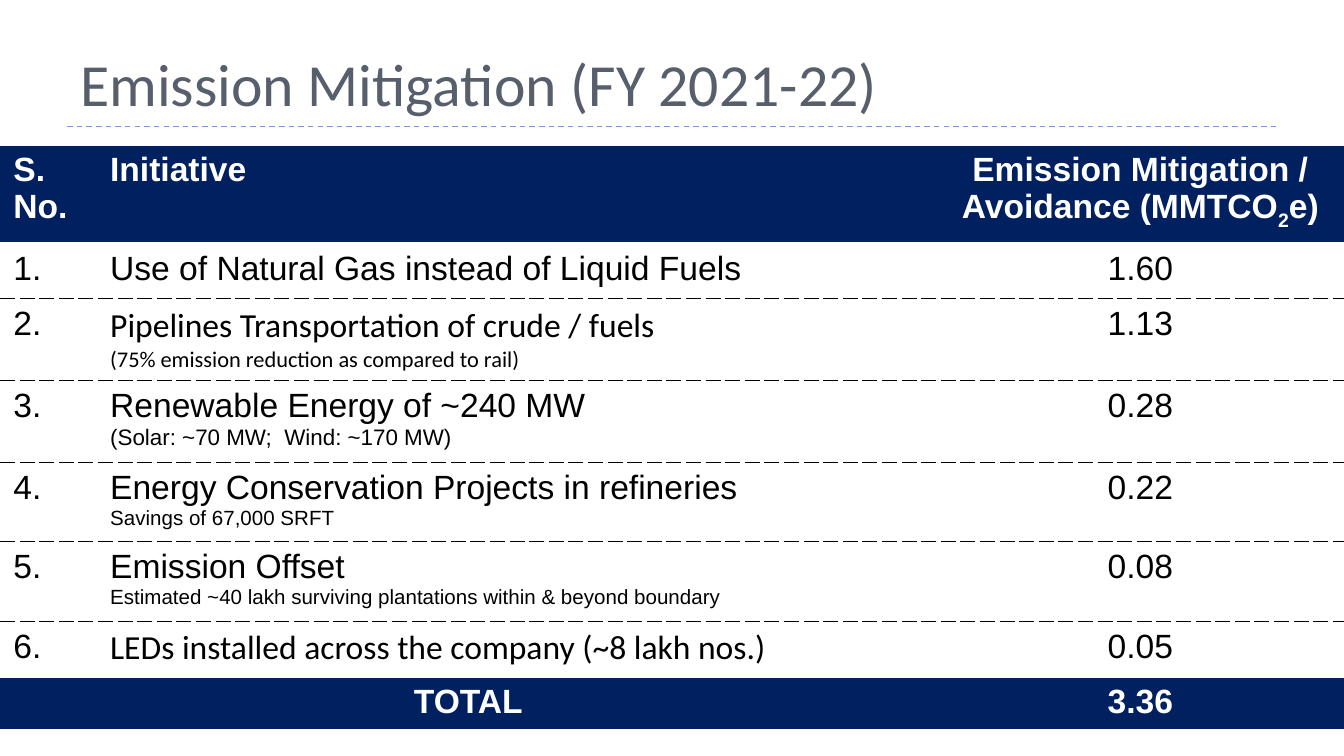
from lxml import etree
from pptx import Presentation
from pptx import util as u
from pptx.dml.color import RGBColor
from pptx.enum import dml, shapes, text
from pptx.oxml import ns

NAVY = RGBColor(0x00, 0x20, 0x60)
WHITE = RGBColor(0xFF, 0xFF, 0xFF)
BLACK = RGBColor(0x00, 0x00, 0x00)
SLATE = RGBColor(0x57, 0x5F, 0x6D)
BLUE = RGBColor(0x75, 0x98, 0xD9)
NO_STYLE = "{2D5ABB26-0587-4C30-8999-92F81FD0307C}"
SOLID = (WHITE, 2.25, "solid")
DASHED = (BLACK, 0.5, "sysDash")


def add_text(para, words, size=18, font="Arial", color=BLACK, bold=False,
             align=text.PP_ALIGN.LEFT, baseline=0):
    para.alignment = align
    span = para.add_run()
    span.text = words
    span.font.size = u.Pt(size)
    span.font.name = font
    span.font.bold = bold
    span.font.color.rgb = color
    if baseline:
        span.font._element.set("baseline", str(baseline * 1000))


def set_borders(cell, top, bottom):
    """Draw the top and bottom edges and leave the sides open."""
    edges = {"lnL": None, "lnR": None, "lnT": top, "lnB": bottom}
    for place, (tag, style) in enumerate(edges.items()):
        line = etree.Element(ns.qn("a:" + tag))
        if style is None:
            etree.SubElement(line, ns.qn("a:noFill"))
        else:
            color, width, dash = style
            line.set("w", str(int(u.Pt(width))))
            fill = etree.SubElement(line, ns.qn("a:solidFill"))
            etree.SubElement(fill, ns.qn("a:srgbClr"), val=str(color))
            etree.SubElement(line, ns.qn("a:prstDash"), val=dash)
        cell._tc.get_or_add_tcPr().insert(place, line)


deck = Presentation()
deck.slide_width = u.Inches(10)
deck.slide_height = u.Inches(10 * 9 / 16)
page = deck.slides.add_slide(deck.slide_layouts[6])

# Title and its rule
rule = page.shapes.add_connector(
    shapes.MSO_CONNECTOR.STRAIGHT,
    u.Inches(0.5), u.Inches(0.94), u.Inches(9.5), u.Inches(0.94))
rule.line.color.rgb = BLUE
rule.line.width = u.Pt(0.75)
rule.line.dash_style = dml.MSO_LINE.DASH
etree.SubElement(rule._element.spPr, ns.qn("a:effectLst"))

title = page.shapes.add_textbox(
    u.Inches(0.5), u.Inches(0.12), u.Inches(6.78), u.Inches(0.81))
title.text_frame.word_wrap = True
title.text_frame.vertical_anchor = text.MSO_ANCHOR.BOTTOM
add_text(title.text_frame.paragraphs[0], "Emission Mitigation (FY 2021-22)",
         size=32, font="Calibri", color=SLATE)

# Initiative, its font, note, note size, mitigation
initiatives = [
    ("Use of Natural Gas instead of Liquid Fuels", "Arial", None, 0, "1.60"),
    ("Pipelines Transportation of crude / fuels", "Calibri",
     "(75% emission reduction as compared to rail)", 12, "1.13"),
    ("Renewable Energy of ~240 MW", "Arial",
     "(Solar: ~70 MW;  Wind: ~170 MW)", 12, "0.28"),
    ("Energy Conservation Projects in refineries", "Arial",
     "Savings of 67,000 SRFT", 11, "0.22"),
    ("Emission Offset", "Arial",
     "Estimated ~40 lakh surviving plantations within & beyond boundary", 11, "0.08"),
    ("LEDs installed across the company (~8 lakh nos.)", "Calibri", None, 0, "0.05"),
]
column_widths = [0.72, 6.25, 3.03]
row_heights = [0.68, 0.41, 0.61, 0.61, 0.59, 0.59, 0.41, 0.41]
last = len(row_heights) - 1

frame = page.shapes.add_table(
    len(row_heights), len(column_widths),
    u.Inches(0), u.Inches(1.07), u.Inches(10), u.Inches(sum(row_heights)))
table = frame.table
table.horz_banding = False
table._tbl.tblPr.find(ns.qn("a:tableStyleId")).text = NO_STYLE
for column, width in zip(table.columns, column_widths):
    column.width = u.Inches(width)
for number, (row, height) in enumerate(zip(table.rows, row_heights)):
    row.height = u.Inches(height)
    for cell in row.cells:
        cell.fill.solid()
        cell.fill.fore_color.rgb = NAVY if number in (0, last) else WHITE
        set_borders(cell,
                    top=DASHED if 1 < number < last else SOLID,
                    bottom=DASHED if 0 < number < last - 1 else SOLID)
table.cell(last, 0).merge(table.cell(last, 1))

# Header and total
strong = {"color": WHITE, "bold": True}
centered = {"align": text.PP_ALIGN.CENTER}
heads = [table.cell(0, i).text_frame.paragraphs[0] for i in range(3)]
add_text(heads[0], "S. No.", **strong)
add_text(heads[1], "Initiative", **strong)
add_text(heads[2], "Emission Mitigation / Avoidance (MMTCO", **strong, **centered)
add_text(heads[2], "2", baseline=-25, **strong, **centered)
add_text(heads[2], "e)", **strong, **centered)
for column, words in ((0, "TOTAL"), (2, "3.36")):
    add_text(table.cell(last, column).text_frame.paragraphs[0], words,
             **strong, **centered)

# Initiatives
for number, (name, font, note, note_size, value) in enumerate(initiatives, 1):
    label, detail, amount = [table.cell(number, i).text_frame for i in range(3)]
    add_text(label.paragraphs[0], f"{number}.")
    add_text(detail.paragraphs[0], name, font=font)
    if note:
        add_text(detail.add_paragraph(), note, size=note_size, font=font)
    add_text(amount.paragraphs[0], value, **centered)

deck.save("out.pptx")
